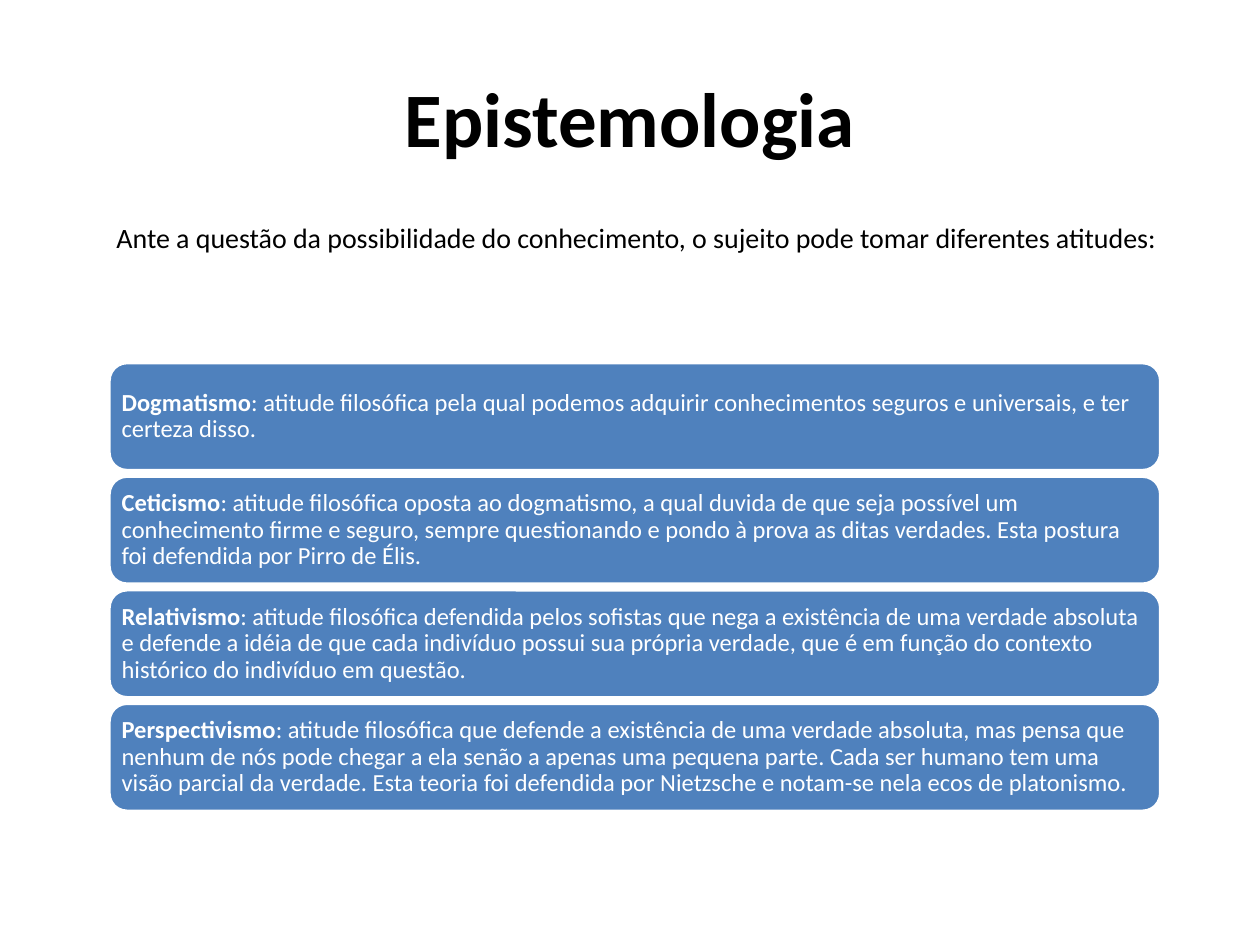
import pptx
import pptx.util
import pptx.dml.color
import pptx.enum.shapes
import pptx.enum.text

Pt = pptx.util.Pt
Align = pptx.enum.text.PP_ALIGN
Anchor = pptx.enum.text.MSO_ANCHOR
COLORS = {"ink": "000000", "card": "4F81BD", "white": "FFFFFF"}
STANCES = [
    ("Dogmatismo", "atitude filosófica pela qual podemos adquirir conhecimentos "
     "seguros e universais, e ter certeza disso."),
    ("Ceticismo", "atitude filosófica oposta ao dogmatismo, a qual duvida de que "
     "seja possível um conhecimento firme e seguro, sempre questionando e pondo à "
     "prova as ditas verdades. Esta postura foi defendida por Pirro de Élis."),
    ("Relativismo", "atitude filosófica defendida pelos sofistas que nega a "
     "existência de uma verdade absoluta e defende a idéia de que cada indivíduo "
     "possui sua própria verdade, que é em função do contexto histórico do "
     "indivíduo em questão."),
    ("Perspectivismo", "atitude filosófica que defende a existência de uma verdade "
     "absoluta, mas pensa que nenhum de nós pode chegar a ela senão a apenas uma "
     "pequena parte. Cada ser humano tem uma visão parcial da verdade. Esta teoria "
     "foi defendida por Nietzsche e notam-se nela ecos de platonismo."),
]


def color(name):
    return pptx.dml.color.RGBColor.from_string(COLORS[name])


def write(para, text, size=14, ink="ink", bold=False, face="Calibri"):
    run = para.add_run()
    run.text = text
    run.font.name = face
    run.font.size = Pt(size)
    run.font.bold = bold
    run.font.color.rgb = color(ink)


class Page:
    def __init__(self, deck):
        self.slide = deck.slides.add_slide(deck.slide_layouts[6])
        self.inset = Pt(4.2)

    def label(self, text, left, top, width, height, align=Align.LEFT,
              anchor=Anchor.TOP, **style):
        box = self.slide.shapes.add_textbox(Pt(left), Pt(top), Pt(width), Pt(height))
        frame = box.text_frame
        frame.word_wrap = True
        frame.vertical_anchor = anchor
        para = frame.paragraphs[0]
        para.alignment = align
        write(para, text, **style)

    def card(self, term, gloss, left, top, width, height):
        kind = pptx.enum.shapes.MSO_SHAPE.ROUNDED_RECTANGLE
        card = self.slide.shapes.add_shape(kind, Pt(left), Pt(top), Pt(width), Pt(height))
        card.shadow.inherit = False
        card.fill.solid()
        card.fill.fore_color.rgb = color("card")
        card.line.color.rgb = color("white")
        card.line.width = Pt(2)
        frame = card.text_frame
        frame.word_wrap = True
        frame.vertical_anchor = Anchor.MIDDLE
        frame.margin_left = frame.margin_right = self.inset
        frame.margin_top = frame.margin_bottom = self.inset
        para = frame.paragraphs[0]
        para.alignment = Align.LEFT
        para.line_spacing = 0.9
        write(para, term, ink="white", bold=True)
        write(para, f": {gloss}", ink="white")


def main():
    deck = pptx.Presentation()
    deck.slide_width, deck.slide_height = Pt(720), Pt(540)
    page = Page(deck)
    page.label("Epistemologia", 36, 21.6, 648, 90, align=Align.CENTER,
               anchor=Anchor.MIDDLE, size=44, bold=True)
    page.label("Ante a questão da possibilidade do conhecimento, o sujeito pode "
               "tomar diferentes atitudes:", 59.5, 122.4, 623.5, 46, size=16)
    for row, (term, gloss) in enumerate(STANCES):
        page.card(term, gloss, 62.3, 207.2 + row * 64.9, 601, 61.7)
    deck.save("out.pptx")


if __name__ == "__main__":
    main()
